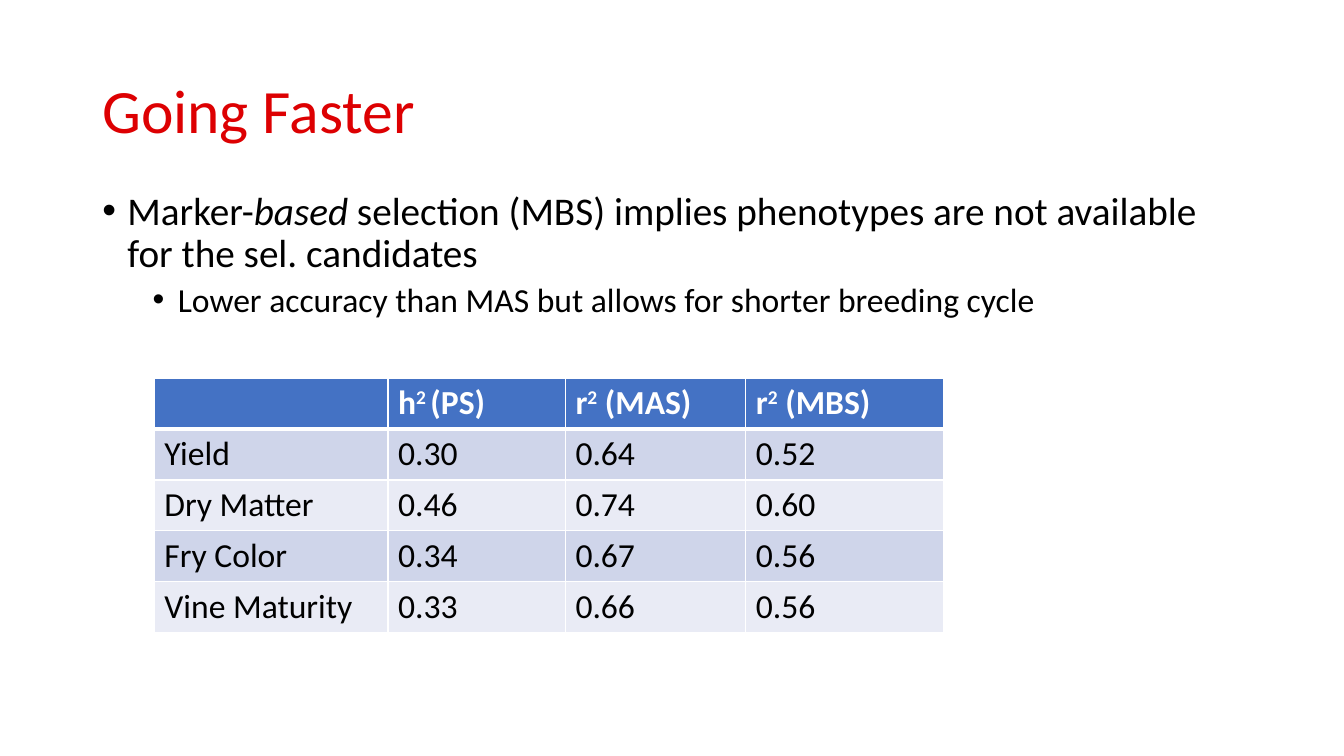
from dataclasses import dataclass

from lxml.etree import SubElement
from pptx import Presentation
from pptx.dml.color import RGBColor
from pptx.enum.text import MSO_ANCHOR
from pptx.oxml.ns import qn
from pptx.slide import Slide
from pptx.table import _Cell
from pptx.text.text import _Paragraph
from pptx.util import Pt

FONT = "Calibri"
BLACK, WHITE, RED = "000000", "FFFFFF", "DD0002"
HEADER_FILL = "4472C4"
BAND_FILLS = ("CFD5EA", "E9EBF5")
TABLE_LEFT, TABLE_TOP, ROW_HEIGHT = 110.2, 270, 36.4
COLUMN_WIDTHS = (167, 126.7, 128.9, 141.1)


@dataclass(frozen=True)
class Span:
    text: str
    italic: bool = False
    superscript: bool = False


@dataclass(frozen=True)
class Line:
    spans: tuple[Span, ...]
    size: float
    color: str = BLACK
    bold: bool = False
    space_before: float = 0
    line_spacing: float = 1
    level: int = 0
    bullet_left: float = 0


@dataclass(frozen=True)
class TextBlock:
    top: float
    height: float
    anchor: MSO_ANCHOR
    lines: tuple[Line, ...]


BLOCKS = (
    TextBlock(28.75, 104.4, MSO_ANCHOR.MIDDLE, (
        Line((Span("Going Faster"),), 44, RED, line_spacing=0.9),
    )),
    TextBlock(133.2, 353.5, MSO_ANCHOR.TOP, (
        Line((
            Span("Marker-"),
            Span("based", italic=True),
            Span(" selection (MBS) implies phenotypes are not available for the sel. candidates"),
        ), 28, line_spacing=0.9, bullet_left=18),
        Line((Span("Lower accuracy than MAS but allows for shorter breeding cycle"),),
             24, space_before=5, line_spacing=0.9, level=1, bullet_left=54),
    )),
)

HEADERS = (
    (),
    (Span("h"), Span("2 ", superscript=True), Span("(PS)")),
    (Span("r"), Span("2", superscript=True), Span(" (MAS)")),
    (Span("r"), Span("2", superscript=True), Span(" (MBS)")),
)
TRAITS = (
    ("Yield", "0.30", "0.64", "0.52"),
    ("Dry Matter", "0.46", "0.74", "0.60"),
    ("Fry Color", "0.34", "0.67", "0.56"),
    ("Vine Maturity", "0.33", "0.66", "0.56"),
)


def color_of(value: str) -> RGBColor:
    return RGBColor.from_string(value)


def write_line(paragraph: _Paragraph, line: Line) -> None:
    paragraph.level = line.level
    paragraph.line_spacing = line.line_spacing
    paragraph.space_before = Pt(line.space_before)
    if line.bullet_left:
        properties = paragraph._p.get_or_add_pPr()
        properties.set("marL", str(Pt(line.bullet_left)))
        properties.set("indent", str(Pt(-18)))
        SubElement(properties, qn("a:buFont"), typeface="Arial")
        SubElement(properties, qn("a:buChar"), char="•")
    for span in line.spans:
        run = paragraph.add_run()
        run.text = span.text
        run.font.name = FONT
        run.font.size = Pt(line.size)
        run.font.bold = line.bold
        run.font.italic = span.italic
        run.font.color.rgb = color_of(line.color)
        if span.superscript:
            run.font._element.set("baseline", "30000")


def draw_block(slide: Slide, block: TextBlock) -> None:
    shape = slide.shapes.add_textbox(Pt(66), Pt(block.top), Pt(828), Pt(block.height))
    text_frame = shape.text_frame
    text_frame.word_wrap = True
    text_frame.vertical_anchor = block.anchor
    for index, line in enumerate(block.lines):
        paragraph = text_frame.add_paragraph() if index else text_frame.paragraphs[0]
        write_line(paragraph, line)


def style_cell(cell: _Cell, fill: str, top_width: float, bottom_width: float) -> None:
    properties = cell._tc.get_or_add_tcPr()
    borders = {"a:lnL": 1, "a:lnR": 1, "a:lnT": top_width, "a:lnB": bottom_width}
    for tag, width in borders.items():
        border = SubElement(properties, qn(tag), w=str(Pt(width)))
        solid_fill = SubElement(border, qn("a:solidFill"))
        SubElement(solid_fill, qn("a:srgbClr"), val=WHITE)
    cell.fill.solid()
    cell.fill.fore_color.rgb = color_of(fill)


def draw_table(slide: Slide) -> None:
    rows = (HEADERS, *(tuple((Span(text),) for text in trait) for trait in TRAITS))
    frame = slide.shapes.add_table(
        len(rows), len(COLUMN_WIDTHS), Pt(TABLE_LEFT), Pt(TABLE_TOP),
        Pt(sum(COLUMN_WIDTHS)), Pt(ROW_HEIGHT * len(rows)))
    table = frame.table
    for column, width in zip(table.columns, COLUMN_WIDTHS):
        column.width = Pt(width)
    for row_index, row in enumerate(rows):
        table.rows[row_index].height = Pt(ROW_HEIGHT)
        is_header = row_index == 0
        fill = HEADER_FILL if is_header else BAND_FILLS[(row_index - 1) % 2]
        for column_index, spans in enumerate(row):
            cell = table.cell(row_index, column_index)
            style_cell(cell, fill, 3 if row_index == 1 else 1, 3 if is_header else 1)
            line = Line(spans, 24, WHITE if is_header else BLACK, bold=is_header)
            write_line(cell.text_frame.paragraphs[0], line)


def main() -> None:
    presentation = Presentation()
    presentation.slide_width = Pt(960)
    presentation.slide_height = Pt(540)
    slide = presentation.slides.add_slide(presentation.slide_layouts[6])
    for block in BLOCKS:
        draw_block(slide, block)
    draw_table(slide)
    presentation.save("out.pptx")


if __name__ == "__main__":
    main()
